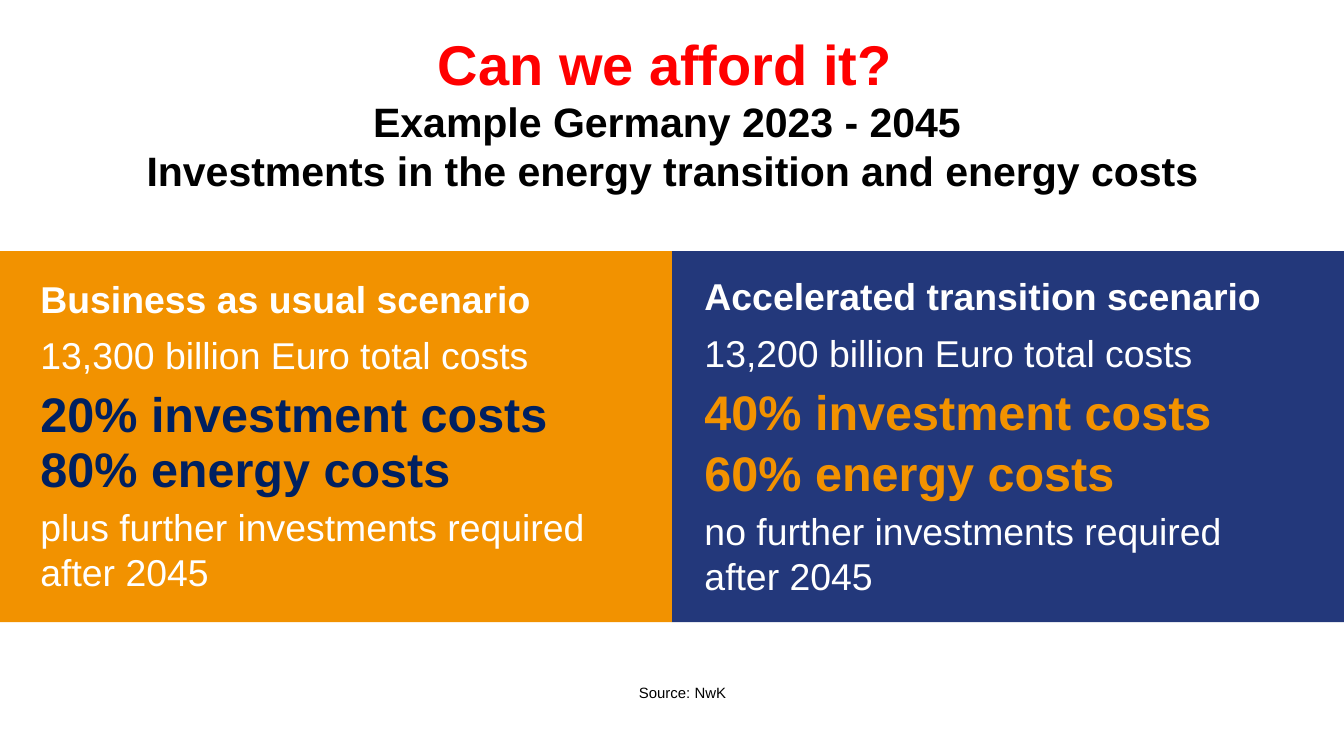
"""Build a slide comparing two energy cost scenarios for Germany."""
from dataclasses import dataclass

from lxml import etree
from pptx import Presentation
from pptx.dml.color import RGBColor
from pptx.enum import shapes, text
from pptx.oxml import ns
from pptx.util import Cm, Pt

WHITE, BLACK, RED = "FFFFFF", "000000", "FF0000"
ORANGE, BLUE, NAVY = "F29200", "23387B", "002060"
SLIDE_WIDTH, SLIDE_HEIGHT = 25.4, 14.29
PANEL_TOP, PANEL_WIDTH, PANEL_HEIGHT = 4.75, SLIDE_WIDTH / 2, 7.01


@dataclass
class Line:
    wording: str
    size: int = 20
    color: str = WHITE
    bold: bool = False
    spacing: float = 1.0
    after: int = 6


@dataclass
class Scenario:
    panel_color: str
    box: tuple[float, float, float, float]
    lines: list[Line]


SCENARIOS = [
    Scenario(ORANGE, (0.51, 5.38, 11.79, 5.69), [
        Line("Business as usual scenario", bold=True),
        Line("13,300 billion Euro total costs"),
        Line("20% investment costs", 26, NAVY, True, 0.95, 0),
        Line("80% energy costs", 26, NAVY, True, 0.95, 3),
        Line("plus further investments required after 2045"),
    ]),
    Scenario(BLUE, (13.06, 6.38, 11.43, 3.76), [
        Line("Accelerated transition scenario", bold=True, spacing=0.95),
        Line("13,200 billion Euro total costs"),
        Line("40% investment costs", 26, ORANGE, True, 0.95, 3),
        Line("60% energy costs", 26, ORANGE, True, 0.95, 3),
        Line("no further investments required after 2045"),
    ]),
]


def set_font(font, size: int, color: str, bold: bool = False) -> None:
    """Apply the slide's typeface with the given size, colour and weight."""
    font.name, font.size, font.bold = "Arial", Pt(size), bold
    font.color.rgb = RGBColor.from_string(color)


def place(shape, box: tuple[float, float, float, float]) -> None:
    """Move a shape to left, top, width, height in centimetres."""
    shape.left, shape.top, shape.width, shape.height = map(Cm, box)


def prepare_frame(frame) -> None:
    """Wrap the text, keep its size and centre it vertically."""
    frame.word_wrap = True
    frame.auto_size = text.MSO_AUTO_SIZE.NONE
    frame.vertical_anchor = text.MSO_ANCHOR.MIDDLE


def remove_bullet(paragraph) -> None:
    """Clear the bullet and indent inherited from the layout."""
    properties = paragraph._p.get_or_add_pPr()
    properties.set("marL", "0")
    properties.set("indent", "0")
    etree.SubElement(properties, ns.qn("a:buNone"))


def add_panel(slide, left: float, color: str) -> None:
    """Draw a coloured panel behind the text."""
    panel = slide.shapes.add_shape(
        shapes.MSO_SHAPE.RECTANGLE, Cm(left), Cm(PANEL_TOP), Cm(PANEL_WIDTH), Cm(PANEL_HEIGHT))
    panel.shadow.inherit = False
    panel.fill.solid()
    panel.fill.fore_color.rgb = RGBColor.from_string(color)
    panel.line.fill.background()
    slide.shapes._spTree.insert(2, panel._element)


def write_scenario(body, scenario: Scenario) -> None:
    """Fill a body placeholder with the lines of a scenario."""
    place(body, scenario.box)
    frame = body.text_frame
    prepare_frame(frame)
    for index, line in enumerate(scenario.lines):
        paragraph = frame.add_paragraph() if index else frame.paragraphs[0]
        paragraph.text = line.wording
        paragraph.line_spacing = line.spacing
        paragraph.space_before, paragraph.space_after = Pt(0), Pt(line.after)
        set_font(paragraph.font, line.size, line.color, line.bold)
        remove_bullet(paragraph)


def write_title(title) -> None:
    """Write the question and the two lines that explain it."""
    place(title, (0.03, 1.14, 25.37, 1.96))
    frame = title.text_frame
    prepare_frame(frame)
    heading, topic = frame.paragraphs[0], frame.add_paragraph()
    question = heading.add_run()
    question.text = "Can we afford it? "
    set_font(question.font, 30, RED, True)
    heading.add_line_break()
    example = heading.add_run()
    example.text = "Example Germany 2023 - 2045 "
    set_font(example.font, 22, BLACK, True)
    topic.text = "Investments in the energy transition and energy costs"
    set_font(topic.font, 22, BLACK, True)
    for paragraph in (heading, topic):
        paragraph.alignment = text.PP_ALIGN.CENTER


def add_source(slide) -> None:
    """Add the source note under the panels."""
    note = slide.shapes.add_textbox(Cm(6.5), Cm(12.8), Cm(12.8), Cm(0.61))
    note.text_frame.word_wrap = True
    paragraph = note.text_frame.paragraphs[0]
    paragraph.text = "Source: NwK"
    paragraph.alignment = text.PP_ALIGN.CENTER
    set_font(paragraph.font, 8, BLACK)


def main() -> None:
    """Build and save the presentation."""
    presentation = Presentation()
    presentation.slide_width, presentation.slide_height = Cm(SLIDE_WIDTH), Cm(SLIDE_HEIGHT)
    slide = presentation.slides.add_slide(presentation.slide_layouts.get_by_name("Two Content"))
    write_title(slide.shapes.title)
    for index, scenario in enumerate(SCENARIOS):
        add_panel(slide, index * PANEL_WIDTH, scenario.panel_color)
        write_scenario(slide.placeholders[index + 1], scenario)
    add_source(slide)
    presentation.save("out.pptx")


if __name__ == "__main__":
    main()
